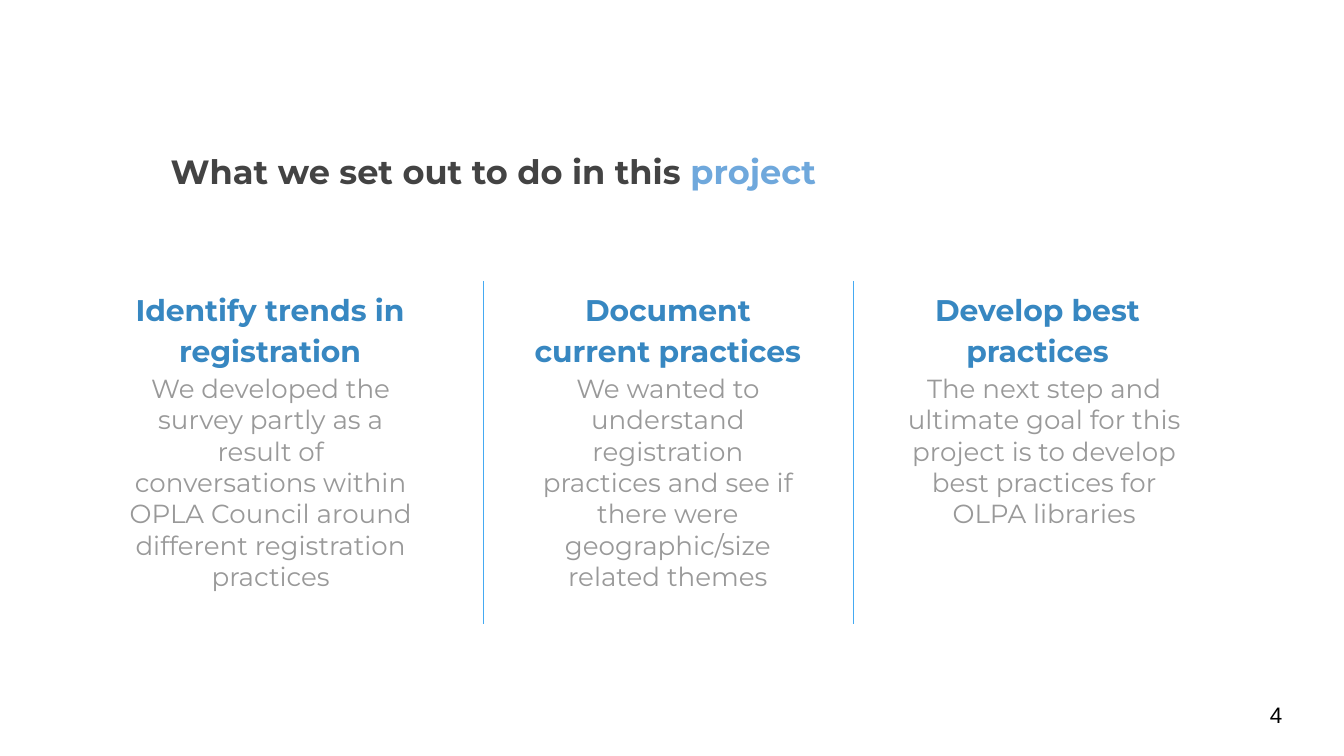
from pptx import Presentation
from pptx.dml.color import RGBColor
from pptx.enum import shapes, text
from pptx.oxml.ns import qn
from pptx.util import Inches, Pt
from lxml import etree

DARK = RGBColor(0x43, 0x43, 0x43)
SKY = RGBColor(0x6F, 0xA8, 0xDC)
BLUE = RGBColor(0x37, 0x87, 0xC1)
RULE = RGBColor(0x45, 0xAA, 0xF2)
GREY = RGBColor(0x99, 0x99, 0x99)
BLACK = RGBColor(0, 0, 0)
FONT = "Montserrat"
LEFT, MID = text.PP_ALIGN.LEFT, text.PP_ALIGN.CENTER
TOP, CENTRE, BOTTOM = (text.MSO_ANCHOR.TOP, text.MSO_ANCHOR.MIDDLE,
                       text.MSO_ANCHOR.BOTTOM)

TITLE = [("What we set out to do in this ", DARK), ("project", SKY)]
NUMBER = "4"
# heading, body, heading left, body left, body width
COLUMNS = [
    ("Identify trends in registration",
     "We developed the survey partly as a result of conversations within "
     "OPLA Council around different registration practices", 0.9, 0.83, 2.37),
    ("Document current practices",
     "We wanted to understand registration practices and see if there were "
     "geographic/size related themes", 3.86, 3.86, 2.22),
    ("Develop best practices",
     "The next step and ultimate goal for this project is to develop best "
     "practices for OLPA libraries", 6.61, 6.61, 2.32),
]
HEAD_W, HEAD_Y, HEAD_H = 2.22, 2.19, 0.65
BODY_Y, BODY_H = 2.67, 1.22
RULE_TOP, RULE_END, RULE_GAP = 2.09, 4.64, 0.26


def fill(shape, box, runs, size, bold=False, align=MID, anchor=TOP,
         font=FONT, spacing=1.0):
    """Place a text shape and write its (text, colour) runs."""
    shape.left, shape.top, shape.width, shape.height = map(Inches, box)
    frame = shape.text_frame
    frame.word_wrap = True
    frame.auto_size = text.MSO_AUTO_SIZE.NONE
    frame.vertical_anchor = anchor
    frame.margin_left = frame.margin_right = Inches(0.1)
    frame.margin_top = frame.margin_bottom = Inches(0.1)
    para = frame.paragraphs[0]
    para.alignment = align
    para.line_spacing = spacing
    for words, colour in runs:
        run = para.add_run()
        run.text = words
        run.font.name = font
        run.font.size = Pt(size)
        run.font.bold = bold
        run.font.color.rgb = colour


def add_text(slide, box, words, colour, size, **style):
    shape = slide.shapes.add_textbox(*map(Inches, box))
    fill(shape, box, [(words, colour)], size, **style)


def add_rule(slide, x):
    """Draw a divider that takes nothing from the theme's line style."""
    rule = slide.shapes.add_connector(
        shapes.MSO_CONNECTOR.STRAIGHT,
        *map(Inches, (x, RULE_TOP, x, RULE_END)))
    rule.line.fill.solid()
    rule.line.fill.fore_color.rgb = RULE
    rule.line.width = Pt(0.75)
    node = rule._element
    etree.SubElement(node.spPr, qn("a:effectLst"))
    node.remove(node.find(qn("p:style")))


def main():
    deck = Presentation()
    deck.slide_width = Inches(10)
    deck.slide_height = deck.slide_width * 9 // 16
    slide = deck.slides.add_slide(deck.slide_layouts.get_by_name("Title Only"))
    fill(slide.shapes.title, (1.17, 1.02, 7.71, 0.53), TITLE, 18,
         bold=True, align=LEFT)
    for col, (head, body, head_x, body_x, body_w) in enumerate(COLUMNS):
        if col:
            add_rule(slide, head_x - RULE_GAP)
        add_text(slide, (body_x, BODY_Y, body_w, BODY_H), body, GREY, 14)
        add_text(slide, (head_x, HEAD_Y, HEAD_W, HEAD_H), head, BLUE, 16,
                 bold=True, anchor=BOTTOM, spacing=1.15)
    add_text(slide, (9.35, 5.1, 0.6, 0.43), NUMBER, BLACK, 12,
             align=LEFT, anchor=CENTRE, font="Arial")
    deck.save("out.pptx")


if __name__ == "__main__":
    main()
